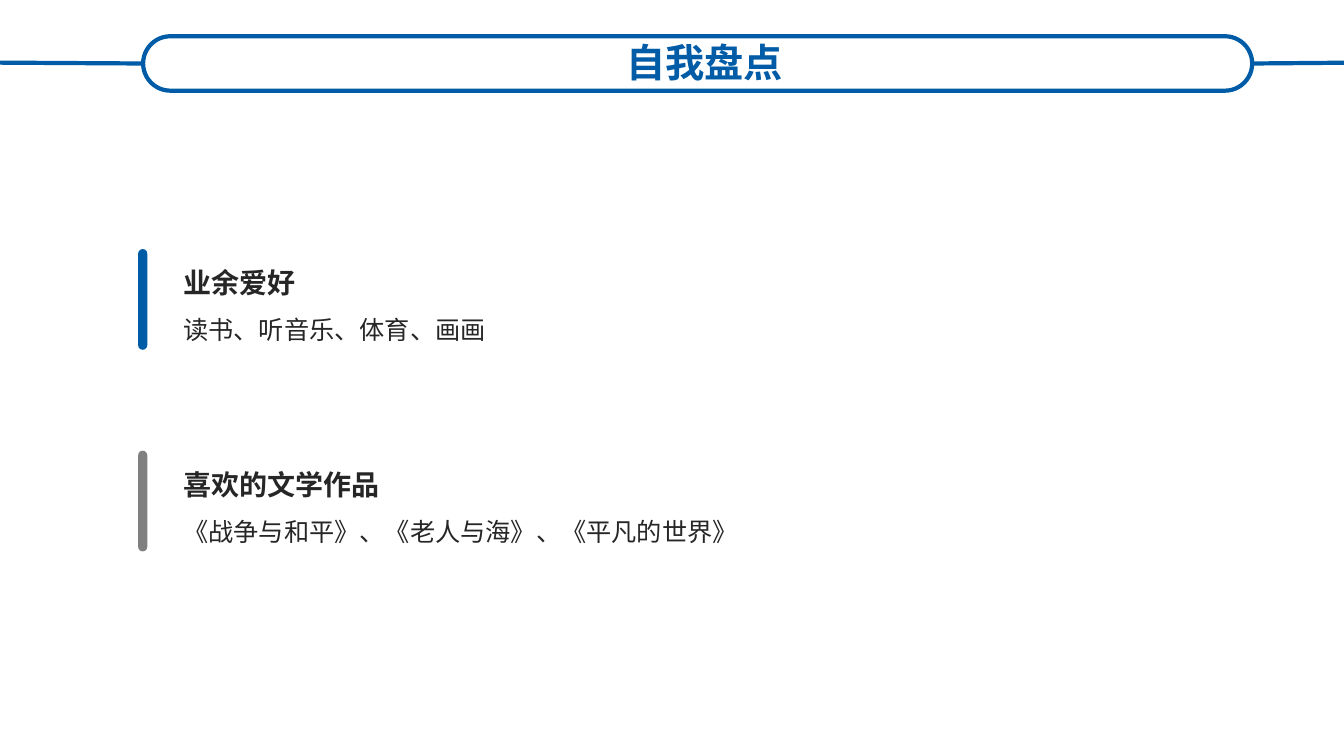
from dataclasses import dataclass

from lxml import etree
from pptx import Presentation, util as u
from pptx.dml.color import RGBColor
from pptx.enum import shapes, text
from pptx.oxml.ns import qn


@dataclass(frozen=True)
class Theme:
    blue: RGBColor = RGBColor(0x00, 0x5C, 0xA7)
    grey: RGBColor = RGBColor(0x80, 0x80, 0x80)
    ink: RGBColor = RGBColor(0x26, 0x26, 0x26)
    title_font: str = "Noto Sans CJK JP"
    body_font: str = "Noto Sans CJK SC"
    title_size: int = 28
    heading_size: int = 20
    detail_size: int = 18
    rule_width: int = 3


@dataclass(frozen=True)
class Area:
    """A rectangle in percent of the slide's width and height."""
    left: float
    top: float
    width: float
    height: float


@dataclass(frozen=True)
class Topic:
    heading: str
    detail: str
    bar_color: RGBColor


THEME = Theme()
SLIDE_W, SLIDE_H = u.Inches(13.33), u.Inches(7.5)
TOPIC_TOP, TOPIC_PITCH = 32.27, 26.67
TOPICS = [
    Topic("业余爱好", "读书、听音乐、体育、画画", THEME.blue),
    Topic("喜欢的文学作品", "《战争与和平》、《老人与海》、《平凡的世界》", THEME.grey),
]


def across(share: float) -> int:
    return round(SLIDE_W * share / 100)


def down(share: float) -> int:
    return round(SLIDE_H * share / 100)


def place(area: Area) -> tuple[int, int, int, int]:
    return across(area.left), down(area.top), across(area.width), down(area.height)


def apply(target, values: dict) -> None:
    for name, value in values.items():
        setattr(target, name, value)


def add_capsule(slide, area: Area):
    capsule = slide.shapes.add_shape(shapes.MSO_SHAPE.ROUNDED_RECTANGLE, *place(area))
    capsule.adjustments[0] = 0.5
    capsule.shadow.inherit = False
    return capsule


def add_words(slide, area: Area, frame_format: dict):
    frame = slide.shapes.add_textbox(*place(area)).text_frame
    apply(frame, {"word_wrap": True, **frame_format})
    return frame


def write(paragraph, words: str, paragraph_format: dict, font: str,
          size: int, color: RGBColor, bold: bool) -> None:
    apply(paragraph, paragraph_format)
    run = paragraph.add_run()
    run.text = words
    apply(run.font, {"name": font, "size": u.Pt(size), "bold": bold})
    run.font.color.rgb = color
    # Chinese glyphs take the East Asian typeface
    etree.SubElement(run.font._element, qn("a:ea"), typeface=font)


def draw_line(line) -> None:
    line.color.rgb = THEME.blue
    line.width = u.Pt(THEME.rule_width)


def add_side_rule(slide, banner, outer_x: float, site: int) -> None:
    outer = across(outer_x), down(8.27)
    rule = slide.shapes.add_connector(shapes.MSO_CONNECTOR.STRAIGHT, *outer, *outer)
    rule.end_connect(banner, site)
    draw_line(rule.line)
    etree.SubElement(rule._element.spPr, qn("a:effectLst"))


def add_header(slide) -> None:
    banner = add_capsule(slide, Area(10.65, 4.8, 82.52, 7.2))
    banner.fill.background()
    draw_line(banner.line)
    for outer_x, site in ((-1.58, 1), (101.8, 3)):
        add_side_rule(slide, banner, outer_x, site)
    title = add_words(slide, Area(12.23, 4.4, 80.35, 7.6), {})
    write(title.paragraphs[0], "自我盘点", {"alignment": text.PP_ALIGN.CENTER},
          THEME.title_font, THEME.title_size, THEME.blue, True)


def add_topic(slide, topic: Topic, top: float) -> None:
    bar = add_capsule(slide, Area(10.28, top + 0.67, 0.68, 13.33))
    bar.fill.solid()
    bar.fill.fore_color.rgb = topic.bar_color
    bar.line.fill.background()

    frame = add_words(slide, Area(12.9, top, 76.89, 14), {
        "vertical_anchor": text.MSO_ANCHOR.MIDDLE,
        "auto_size": text.MSO_AUTO_SIZE.SHAPE_TO_FIT_TEXT,
    })
    spacing = {"line_spacing": 1.5}
    write(frame.paragraphs[0], topic.heading, spacing,
          THEME.body_font, THEME.heading_size, THEME.ink, True)
    write(frame.add_paragraph(), topic.detail, spacing,
          THEME.body_font, THEME.detail_size, THEME.ink, False)


def main() -> None:
    deck = Presentation()
    apply(deck, {"slide_width": SLIDE_W, "slide_height": SLIDE_H})
    slide = deck.slides.add_slide(deck.slide_layouts[6])

    # Topics, one below the other
    for row, topic in enumerate(TOPICS):
        add_topic(slide, topic, TOPIC_TOP + row * TOPIC_PITCH)

    # Title banner with a rule on either side
    add_header(slide)

    deck.save("out.pptx")


if __name__ == "__main__":
    main()
